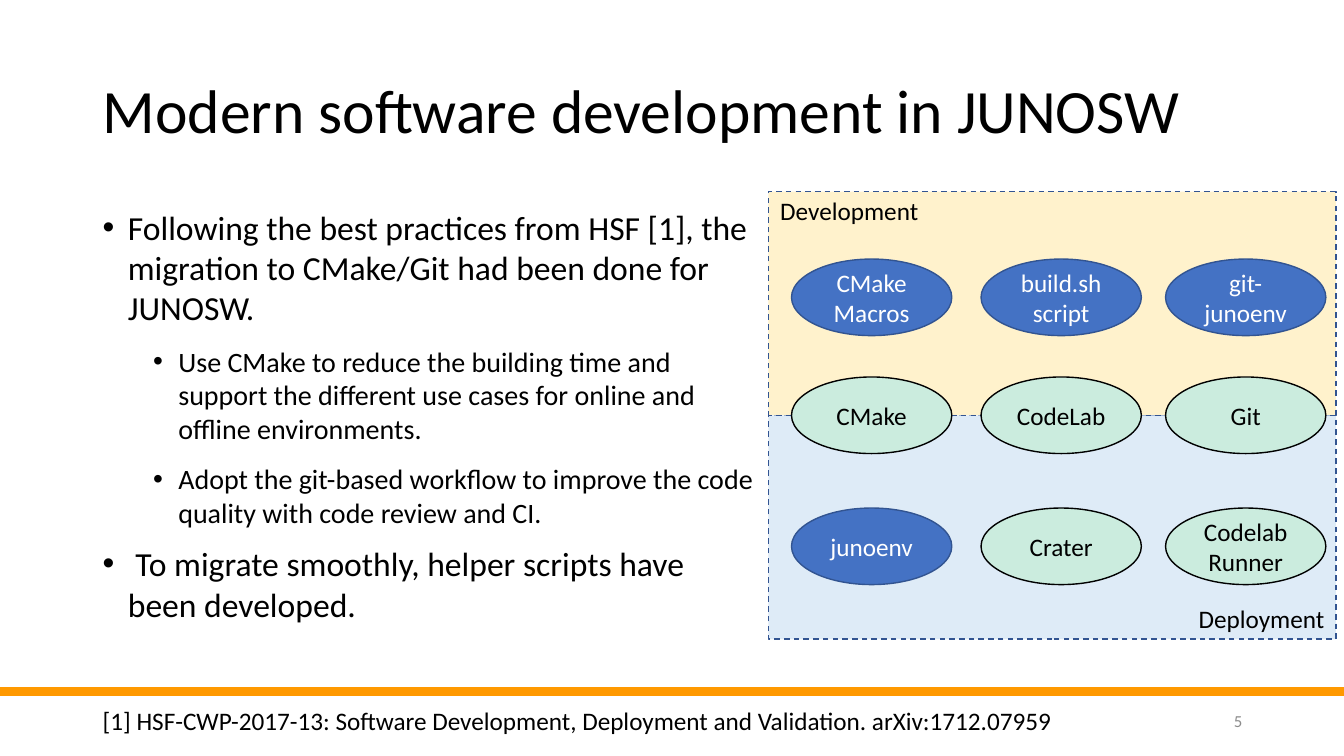
from dataclasses import dataclass

from lxml.etree import SubElement
from pptx import Presentation
from pptx.dml.color import RGBColor
from pptx.enum.dml import MSO_LINE
from pptx.enum.shapes import MSO_CONNECTOR, MSO_SHAPE
from pptx.enum.text import MSO_ANCHOR, PP_ALIGN
from pptx.oxml.ns import qn
from pptx.util import Emu, Pt

PX = 9144
FONT = "Calibri"
COLORS = {
    "black": "000000",
    "white": "FFFFFF",
    "gray": "8C8C8C",
    "accent": "3366CC",
    "orange": "FF9900",
    "cream": "FFF2CC",
    "sky": "DEEBF7",
    "blue": "4472C4",
    "navy": "325491",
    "mint": "CBECDE",
}


@dataclass(frozen=True)
class Box:
    left: int
    top: int
    width: int
    height: int

    def emu(self) -> tuple[Emu, ...]:
        return tuple(Emu(n * PX) for n in (self.left, self.top, self.width, self.height))


@dataclass(frozen=True)
class Tool:
    label: str
    column: int
    row: int
    ours: bool = False


@dataclass(frozen=True)
class Bullet:
    text: str
    level: int = 0


COLUMN_LEFTS = (785, 973, 1156)
ROW_TOPS = (257, 374, 504)
TOOLS = (
    Tool("CMake Macros", 0, 0, ours=True),
    Tool("build.sh script", 1, 0, ours=True),
    Tool("git-junoenv", 2, 0, ours=True),
    Tool("CMake", 0, 1),
    Tool("CodeLab", 1, 1),
    Tool("Git", 2, 1),
    Tool("junoenv", 0, 2, ours=True),
    Tool("Crater", 1, 2),
    Tool("Codelab Runner", 2, 2),
)
BULLETS = (
    Bullet("Following the best practices from HSF [1], the migration to CMake/Git "
           "had been done for JUNOSW."),
    Bullet("Use CMake to reduce the building time and support the different use cases "
           "for online and offline environments.", 1),
    Bullet("Adopt the git-based workflow to improve the code quality with code review "
           "and CI.", 1),
    Bullet(" To migrate smoothly, helper scripts have been developed."),
)


def color(name: str) -> RGBColor:
    return RGBColor.from_string(COLORS[name])


def write(para, text: str, *, size: int = 18, ink: str = "black",
          align=PP_ALIGN.LEFT, spacing: float = 1.0, before: int = 0) -> None:
    para.alignment = align
    para.line_spacing = spacing
    para.space_before = Pt(before)
    span = para.add_run()
    span.text = text
    span.font.name = FONT
    span.font.size = Pt(size)
    span.font.color.rgb = color(ink)


def add_frame(page, box: Box, *, wrap: bool = True, anchor=MSO_ANCHOR.TOP):
    frame = page.shapes.add_textbox(*box.emu()).text_frame
    frame.word_wrap = wrap
    frame.vertical_anchor = anchor
    return frame


def add_label(page, box: Box, text: str, *, wrap: bool = False,
              anchor=MSO_ANCHOR.TOP, **style) -> None:
    frame = add_frame(page, box, wrap=wrap, anchor=anchor)
    write(frame.paragraphs[0], text, **style)


def add_figure(page, kind, box: Box, fill: str, outline: str):
    figure = page.shapes.add_shape(kind, *box.emu())
    figure.shadow.inherit = False
    figure.fill.solid()
    figure.fill.fore_color.rgb = color(fill)
    figure.line.color.rgb = color(outline)
    figure.line.width = Pt(1)
    return figure


def add_panel(page, box: Box, fill: str) -> None:
    panel = add_figure(page, MSO_SHAPE.RECTANGLE, box, fill, "navy")
    panel.line.dash_style = MSO_LINE.DASH


def add_tool(page, tool: Tool) -> None:
    box = Box(COLUMN_LEFTS[tool.column], ROW_TOPS[tool.row], 159, 76)
    fill, outline, ink = ("blue", "navy", "white") if tool.ours else ("mint", "black", "black")
    frame = add_figure(page, MSO_SHAPE.OVAL, box, fill, outline).text_frame
    frame.word_wrap = True
    frame.vertical_anchor = MSO_ANCHOR.MIDDLE
    write(frame.paragraphs[0], tool.label, ink=ink, align=PP_ALIGN.CENTER)


def add_rule(page, right: int, ink: str) -> None:
    height = Emu(686 * PX)
    rule = page.shapes.add_connector(MSO_CONNECTOR.STRAIGHT, 0, height, Emu(right * PX), height)
    rule.line.color.rgb = color(ink)
    rule.line.width = Pt(7)
    SubElement(rule._element.spPr, qn("a:effectLst"))


def add_bullets(page, box: Box) -> None:
    frame = add_frame(page, box)
    for index, bullet in enumerate(BULLETS):
        para = frame.add_paragraph() if index else frame.paragraphs[0]
        size, before = (20, 12) if bullet.level else (24, 10)
        para.level = bullet.level
        write(para, bullet.text, size=size, before=before)
        properties = para._p.get_or_add_pPr()
        properties.set("marL", str((25 + 50 * bullet.level) * PX))
        properties.set("indent", str(-25 * PX))
        SubElement(properties, qn("a:buFont"), typeface="Arial")
        SubElement(properties, qn("a:buChar"), char="•")


def main() -> None:
    deck = Presentation()
    deck.slide_width = Emu(1333 * PX)
    deck.slide_height = Emu(750 * PX)
    page = deck.slides.add_slide(deck.slide_layouts[6])

    add_rule(page, 332, "accent")
    add_rule(page, 1333, "orange")
    add_label(page, Box(92, 40, 1150, 145), "Modern software development in JUNOSW",
              wrap=True, anchor=MSO_ANCHOR.MIDDLE, size=44, spacing=0.9)
    add_bullets(page, Box(92, 200, 671, 476))

    add_panel(page, Box(762, 190, 563, 222), "cream")
    add_panel(page, Box(762, 412, 563, 222), "sky")
    add_label(page, Box(764, 189, 159, 40), "Development")
    add_label(page, Box(1179, 594, 146, 40), "Deployment")
    for tool in TOOLS:
        add_tool(page, tool)

    add_label(page, Box(92, 695, 967, 40),
              "[1] HSF-CWP-2017-13: Software Development, Deployment and Validation. "
              "arXiv:1712.07959")
    add_label(page, Box(942, 695, 300, 40), "5", wrap=True, anchor=MSO_ANCHOR.MIDDLE,
              size=12, ink="gray", align=PP_ALIGN.RIGHT)
    deck.save("out.pptx")


if __name__ == "__main__":
    main()
